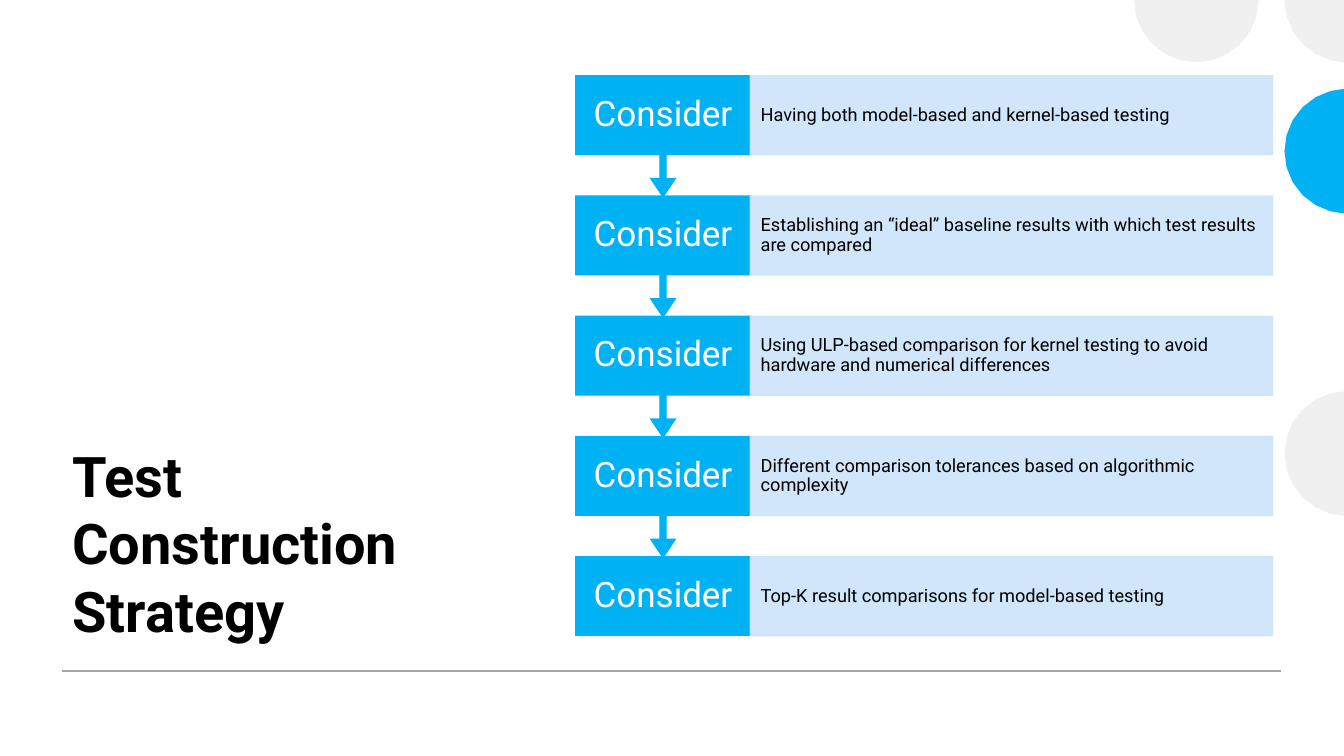
import math

from lxml import etree
from pptx import Presentation
from pptx.dml.color import RGBColor
from pptx.enum import shapes, text
from pptx.oxml import ns
from pptx.util import Cm, Pt

BLACK = RGBColor(0x00, 0x00, 0x00)
WHITE = RGBColor(0xFF, 0xFF, 0xFF)
BLUE = RGBColor(0x00, 0xB2, 0xF3)
PALE_BLUE = RGBColor(0xCC, 0xE4, 0xFA)
PALE_GRAY = RGBColor(0xEF, 0xF0, 0xEF)
RULE_GRAY = RGBColor(0xA6, 0xA6, 0xA6)
FONT = "Roboto"

SLIDE_WIDTH = 33.87
SLIDE_HEIGHT = 19.05
RADIUS = 1.57
EDGE_X = 33.94
CIRCLES = [
    (30.15, 0, 0, 180, PALE_GRAY),
    (EDGE_X, 11.43, 90, 270, PALE_GRAY),
    (EDGE_X, 3.81, 90, 270, BLUE),
    (EDGE_X, 0, 90, 180, PALE_GRAY),
]

ROW_TOP = 1.91
ROW_PITCH = 3.03
ROW_HEIGHT = 1.99
CALLOUT_HEIGHT = 3.05
LABEL_LEFT = 14.51
LABEL_WIDTH = 4.4
DETAIL_WIDTH = 13.16
CONSIDERATIONS = [
    "Having both model-based and kernel-based testing",
    "Establishing an “ideal” baseline results with which test results are compared",
    "Using ULP-based comparison for kernel testing to avoid hardware and numerical differences",
    "Different comparison tolerances based on algorithmic complexity",
    "Top-K result comparisons for model-based testing",
]


def add_panel(kind, left, top, width, height, fill, words, size, color, align):
    shape = slide.shapes.add_shape(kind, Cm(left), Cm(top), Cm(width), Cm(height))
    shape.shadow.inherit = False
    shape.fill.solid()
    shape.fill.fore_color.rgb = fill
    shape.line.color.rgb = fill
    shape.line.width = Pt(1)
    outline = shape.element.spPr.find(ns.qn("a:ln"))
    etree.SubElement(outline, ns.qn("a:miter"), lim="800000")
    frame = shape.text_frame
    frame.word_wrap = True
    frame.vertical_anchor = text.MSO_ANCHOR.MIDDLE
    frame.margin_left = frame.margin_right = Cm(0.26)
    frame.margin_top = frame.margin_bottom = Cm(0.1)
    paragraph = frame.paragraphs[0]
    paragraph.text = words
    paragraph.alignment = align
    paragraph.line_spacing = 0.9
    paragraph.font.name = FONT
    paragraph.font.size = Pt(size)
    paragraph.font.color.rgb = color
    return shape


presentation = Presentation()
presentation.slide_width = Cm(SLIDE_WIDTH)
presentation.slide_height = Cm(SLIDE_HEIGHT)
slide = presentation.slides.add_slide(presentation.slide_layouts[5])

title = slide.shapes.title
title.left, title.top, title.width, title.height = Cm(1.57), Cm(6.92), Cm(10.03), Cm(9.42)
title.text_frame.word_wrap = True
title.text_frame.auto_size = text.MSO_AUTO_SIZE.NONE
title.text_frame.vertical_anchor = text.MSO_ANCHOR.BOTTOM
paragraph = title.text_frame.paragraphs[0]
paragraph.text = "Test Construction Strategy"
paragraph.alignment = text.PP_ALIGN.LEFT
paragraph.font.name = FONT
paragraph.font.size = Pt(40)
paragraph.font.bold = True
paragraph.font.color.rgb = BLACK

for center_x, center_y, start, end, color in CIRCLES:
    points = []
    for degree in range(start, end + 1, 15):
        x = center_x + RADIUS * math.cos(math.radians(degree))
        y = center_y + RADIUS * math.sin(math.radians(degree))
        points.append((Cm(min(x, SLIDE_WIDTH)), Cm(y)))
    if end - start == 90:
        points.append((Cm(SLIDE_WIDTH), Cm(center_y)))
    builder = slide.shapes.build_freeform(*points[0])
    builder.add_line_segments(points[1:], close=True)
    circle = builder.convert_to_shape()
    circle.shadow.inherit = False
    circle.fill.solid()
    circle.fill.fore_color.rgb = color
    circle.line.fill.background()

rule = slide.shapes.add_connector(
    shapes.MSO_CONNECTOR.STRAIGHT, Cm(1.57), Cm(16.91), Cm(32.28), Cm(16.91)
)
rule.line.color.rgb = RULE_GRAY
rule.line.width = Pt(1)
etree.SubElement(rule.element.spPr, ns.qn("a:effectLst"))

last = len(CONSIDERATIONS) - 1
for row in range(last, -1, -1):
    top = ROW_TOP + row * ROW_PITCH
    if row == last:
        kind, height = shapes.MSO_SHAPE.RECTANGLE, ROW_HEIGHT
    else:
        kind, height = shapes.MSO_SHAPE.DOWN_ARROW_CALLOUT, CALLOUT_HEIGHT
    label = add_panel(kind, LABEL_LEFT, top, LABEL_WIDTH, height, BLUE,
                      "Consider", 25, WHITE, text.PP_ALIGN.CENTER)
    if row < last:
        for index, value in enumerate((0.05, 0.1, 0.15, 0.65)):
            label.adjustments[index] = value
    detail = add_panel(shapes.MSO_SHAPE.RECTANGLE, LABEL_LEFT + LABEL_WIDTH, top,
                       DETAIL_WIDTH, ROW_HEIGHT, PALE_BLUE,
                       CONSIDERATIONS[row], 13, BLACK, text.PP_ALIGN.LEFT)
    for color_element in detail.element.spPr.iter(ns.qn("a:srgbClr")):
        etree.SubElement(color_element, ns.qn("a:alpha"), val="90000")

presentation.save("out.pptx")
